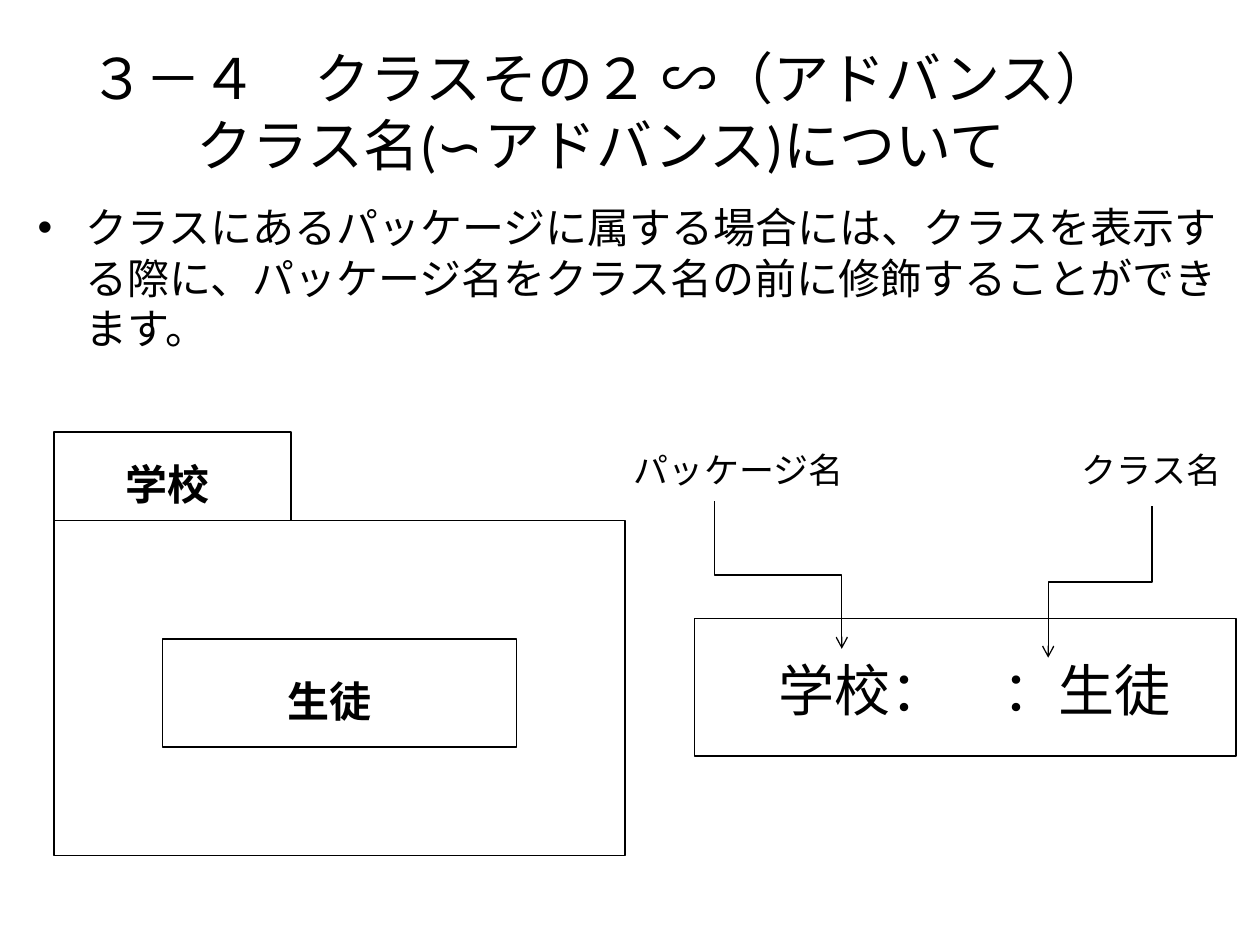
from lxml.etree import SubElement
from pptx import Presentation
from pptx.dml.color import RGBColor
from pptx.enum.shapes import MSO_CONNECTOR, MSO_SHAPE
from pptx.enum.text import MSO_ANCHOR, MSO_AUTO_SIZE, PP_ALIGN
from pptx.oxml.ns import qn
from pptx.util import Cm, Pt

BLACK = RGBColor(0x00, 0x00, 0x00)
WHITE = RGBColor(0xFF, 0xFF, 0xFF)


class SlideBuilder:
    font_name = "Calibri"
    line_width = Pt(0.75)

    def __init__(self, slide):
        self.slide = slide

    def text(self, left, top, width, height, content, size,
             bold=False, align=PP_ALIGN.CENTER, grow=True):
        shape = self.slide.shapes.add_textbox(Cm(left), Cm(top), Cm(width), Cm(height))
        frame = shape.text_frame
        frame.word_wrap = True
        frame.auto_size = MSO_AUTO_SIZE.SHAPE_TO_FIT_TEXT if grow else MSO_AUTO_SIZE.NONE
        paragraph = frame.paragraphs[0]
        paragraph.text = content
        paragraph.alignment = align
        paragraph.font.name = self.font_name
        paragraph.font.size = Pt(size)
        paragraph.font.bold = bold
        paragraph.font.color.rgb = BLACK
        return frame

    def title(self, left, top, width, height, content):
        frame = self.text(left, top, width, height, content, 32, grow=False)
        frame.vertical_anchor = MSO_ANCHOR.MIDDLE

    def bullet(self, left, top, width, height, content):
        frame = self.text(left, top, width, height, content, 24,
                          align=PP_ALIGN.LEFT, grow=False)
        paragraph = frame.paragraphs[0]
        paragraph.space_before = Pt(4.8)
        properties = paragraph._p.get_or_add_pPr()
        indent = Cm(0.96)
        properties.set("marL", str(indent))
        properties.set("indent", str(-indent))
        bullet_font = properties.makeelement(qn("a:buFont"), {"typeface": "Arial"})
        bullet_mark = properties.makeelement(qn("a:buChar"), {"char": "•"})
        properties.find(qn("a:spcBef")).addnext(bullet_font)
        bullet_font.addnext(bullet_mark)

    def box(self, left, top, width, height, kind=MSO_SHAPE.RECTANGLE):
        shape = self.slide.shapes.add_shape(kind, Cm(left), Cm(top), Cm(width), Cm(height))
        shape.shadow.inherit = False
        shape.fill.solid()
        shape.fill.fore_color.rgb = WHITE
        shape.line.color.rgb = BLACK
        shape.line.width = self.line_width

    def down_arrow(self, start_x, start_y, end_x, end_y):
        """Elbow arrow that leaves and arrives vertically."""
        # The elbow preset runs horizontally, so lay it out sideways and turn it.
        center_x, center_y = (start_x + end_x) / 2, (start_y + end_y) / 2
        half_length, half_shift = (end_y - start_y) / 2, abs(end_x - start_x) / 2
        goes_right = end_x > start_x
        reach = -half_length if goes_right else half_length
        connector = self.slide.shapes.add_connector(
            MSO_CONNECTOR.ELBOW,
            Cm(center_x - reach), Cm(center_y - half_shift),
            Cm(center_x + reach), Cm(center_y + half_shift))
        connector.line.color.rgb = BLACK
        connector.line.width = self.line_width
        properties = connector._element.spPr
        turn = 270 if goes_right else 90
        properties.find(qn("a:xfrm")).set("rot", str(turn * 60000))
        SubElement(connector.line._get_or_add_ln(), qn("a:tailEnd"), type="arrow")
        SubElement(properties, qn("a:effectLst"))


def main():
    presentation = Presentation()
    presentation.slide_width = Cm(25.4)
    presentation.slide_height = Cm(19.05)
    builder = SlideBuilder(presentation.slides.add_slide(presentation.slide_layouts[6]))

    # Heading and explanation
    builder.title(1.3, 0.53, 21.64, 3.4,
                  "３－４　クラスその２ ∽（アドバンス）\vクラス名(∽アドバンス)について")
    builder.bullet(0.51, 3.94, 24.59, 3.18,
                   "クラスにあるパッケージに属する場合には、クラスを表示する際に、"
                   "パッケージ名をクラス名の前に修飾することができます。")

    # Package with its tab
    builder.box(1.09, 10.49, 11.51, 6.76)
    builder.box(1.09, 8.71, 4.78, 1.78, MSO_SHAPE.FLOWCHART_PROCESS)
    builder.text(1.5, 9.12, 3.76, 1.27, "学校", 24, bold=True)

    # Class inside the package
    builder.box(3.28, 12.88, 7.14, 2.18, MSO_SHAPE.FLOWCHART_PROCESS)
    builder.text(3.07, 13.49, 7.14, 1.27, "生徒", 24, bold=True)

    # Qualified class name
    builder.box(14, 12.47, 10.92, 2.77)
    builder.text(14.6, 13.08, 10.11, 1.63, "学校：　：生徒", 32)

    # Arrows and labels for the two name parts
    builder.down_arrow(14.4, 10.11, 16.97, 13.08)
    builder.down_arrow(23.22, 10.21, 21.13, 13.26)
    builder.text(12.42, 8.92, 4.95, 1.12, "パッケージ名", 20)
    builder.text(21.13, 8.92, 4.17, 1.12, "クラス名", 20)

    presentation.save("out.pptx")


if __name__ == "__main__":
    main()
